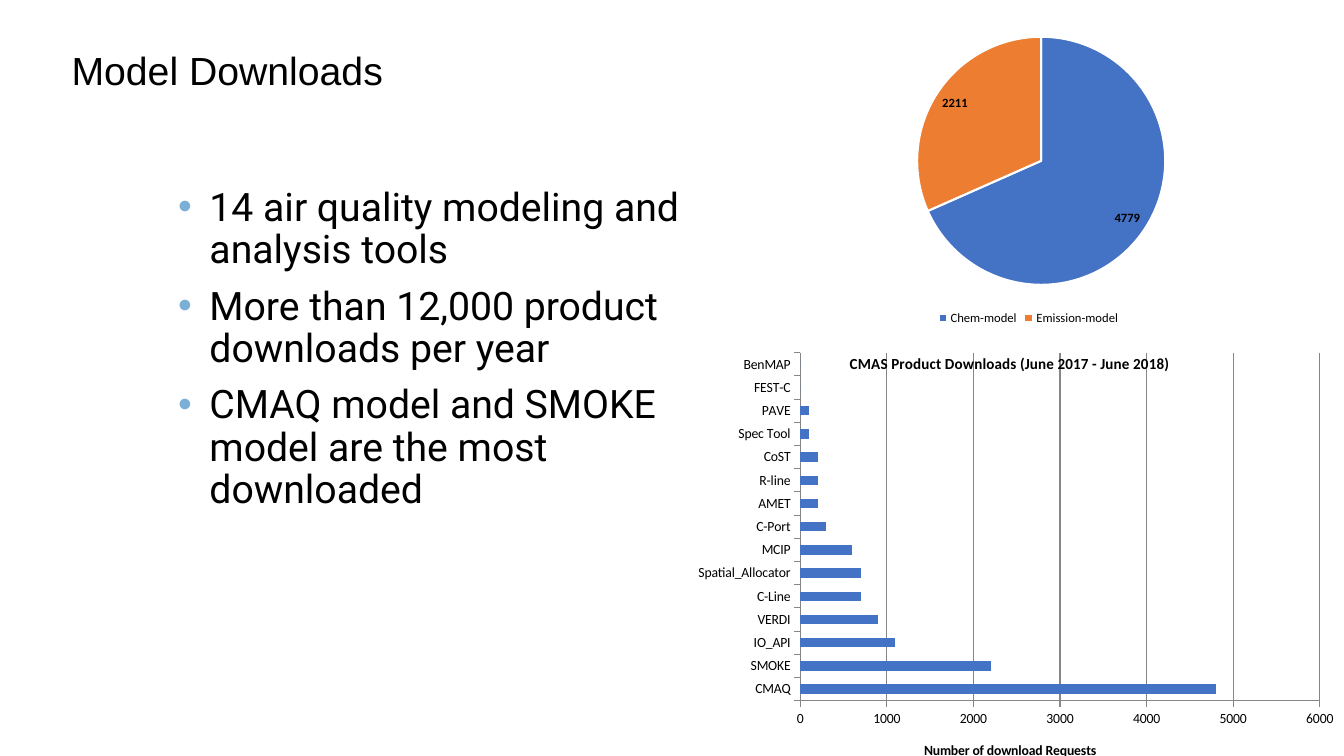
"""Build the Model Downloads slide with its bullets, pie chart and bar chart."""
from dataclasses import dataclass

from lxml.etree import SubElement
from pptx import Presentation
from pptx.chart.data import CategoryChartData
from pptx.dml.color import RGBColor
from pptx.enum.chart import XL_CHART_TYPE, XL_LABEL_POSITION, XL_LEGEND_POSITION, XL_TICK_MARK
from pptx.enum.text import MSO_ANCHOR, MSO_AUTO_SIZE, PP_ALIGN
from pptx.oxml import parse_xml
from pptx.oxml.ns import nsdecls, qn
from pptx.util import Cm, Pt


@dataclass(frozen=True)
class Theme:
    text: RGBColor = RGBColor(0, 0, 0)
    bullet: str = "7AB0D5"
    blue: RGBColor = RGBColor(0x44, 0x72, 0xC4)
    orange: RGBColor = RGBColor(0xED, 0x7D, 0x31)
    white: RGBColor = RGBColor(255, 255, 255)
    grid: RGBColor = RGBColor(0x86, 0x86, 0x86)
    title_font: str = "Arial"
    body_font: str = "Roboto"
    chart_font: str = "Calibri"
    body_size: Pt = Pt(28)
    chart_title_size: Pt = Pt(11)
    chart_size: Pt = Pt(10)
    small_size: Pt = Pt(9)


THEME = Theme()


def style(font, name, size, bold=False):
    font.name, font.size, font.bold = name, size, bold
    font.color.rgb = THEME.text


def place(element, index, **fractions):
    for old in element.findall(qn("c:layout")):
        element.remove(old)
    target = '<c:layoutTarget val="inner"/>' if "w" in fractions else ""
    modes = '<c:xMode val="edge"/><c:yMode val="edge"/>'
    sizes = "".join(f'<c:{key} val="{value}"/>' for key, value in fractions.items())
    element.insert(index, parse_xml(
        f'<c:layout {nsdecls("c")}><c:manualLayout>{target}{modes}{sizes}'
        "</c:manualLayout></c:layout>"))


prs = Presentation()
prs.slide_width, prs.slide_height = Cm(33.87), Cm(19.05)
slide = prs.slides.add_slide(prs.slide_layouts[5])

heading = slide.shapes.title
heading.left, heading.top, heading.width, heading.height = Cm(1.55), Cm(1.17), Cm(13.03), Cm(1.45)
heading.text_frame.text = "Model Downloads"
heading.text_frame.vertical_anchor = MSO_ANCHOR.TOP
heading.text_frame.auto_size = MSO_AUTO_SIZE.NONE
heading_line = heading.text_frame.paragraphs[0]
heading_line.alignment = PP_ALIGN.LEFT
heading_line.line_spacing = 0.9
style(heading_line.runs[0].font, THEME.title_font, THEME.body_size)

points = slide.shapes.add_textbox(Cm(4.24), Cm(4.6), Cm(13.46), Cm(12.47)).text_frame
points.word_wrap = True
points.text = "\n".join([
    "14 air quality modeling and analysis tools",
    "More than 12,000 product downloads per year",
    "CMAQ model and SMOKE model are the most downloaded",
])
for number, point in enumerate(points.paragraphs):
    properties = point._p.get_or_add_pPr()
    properties.set("marL", str(Cm(0.79)))
    properties.set("indent", str(Cm(-0.79)))
    SubElement(SubElement(properties, qn("a:buClr")), qn("a:srgbClr")).set("val", THEME.bullet)
    SubElement(properties, qn("a:buFont")).set("typeface", THEME.title_font)
    SubElement(properties, qn("a:buChar")).set("char", "•")
    point.line_spacing = 0.9
    point.space_before = Pt(10 if number else 0)
    style(point.runs[0].font, THEME.body_font, THEME.body_size)

downloads = {
    "CMAQ": 4800, "SMOKE": 2200, "IO_API": 1100, "VERDI": 900, "C-Line": 700,
    "Spatial_Allocator": 700, "MCIP": 600, "C-Port": 300, "AMET": 200, "R-line": 200,
    "CoST": 200, "Spec Tool": 100, "PAVE": 100, "FEST-C": 0, "BenMAP": 0,
}
product_data = CategoryChartData()
product_data.categories = downloads.keys()
product_data.add_series("Downloads", downloads.values())
products = slide.shapes.add_chart(
    XL_CHART_TYPE.BAR_CLUSTERED, Cm(17.58), Cm(8.36), Cm(16.03), Cm(11.51), product_data).chart
style(products.font, THEME.chart_font, THEME.chart_size)
products.has_legend = False
place(products._chartSpace.chart.plotArea, 0, x=0.176, y=0.046, w=0.835, h=0.762)

bars = products.plots[0]
bars.gap_width = 150
bars.vary_by_categories = False
bars.series[0].format.fill.solid()
bars.series[0].format.fill.fore_color.rgb = THEME.blue

requests = products.value_axis
requests.minimum_scale, requests.maximum_scale, requests.major_unit = 0, 6000, 1000
requests.major_gridlines.format.line.color.rgb = THEME.grid
for axis in (products.category_axis, requests):
    axis.major_tick_mark = XL_TICK_MARK.OUTSIDE
    axis.format.line.color.rgb = THEME.grid

products.has_title = True
for title, wording, size, left, top in (
    (products.chart_title, "CMAS Product Downloads (June 2017 - June 2018)",
     THEME.chart_title_size, 0.24, 0.04),
    (requests.axis_title, "Number of download Requests", THEME.chart_size, 0.36, 0.89),
):
    title.text_frame.text = wording
    style(title.text_frame.paragraphs[0].runs[0].font, THEME.chart_font, size, bold=True)
    place(title._element, 1, x=left, y=top)
products.chart_title._element.find(qn("c:overlay")).set("val", "1")

model_data = CategoryChartData()
model_data.categories = ["Chem-model", "Emission-model"]
model_data.add_series("Downloads", [4779, 2211])
models = slide.shapes.add_chart(
    XL_CHART_TYPE.PIE, Cm(19.53), Cm(0.58), Cm(12.78), Cm(7.72), model_data).chart
style(models.font, THEME.chart_font, THEME.chart_size)
models.has_title = False
models.has_legend = True
models.legend.position = XL_LEGEND_POSITION.BOTTOM
models.legend.include_in_layout = False
style(models.legend.font, THEME.chart_font, THEME.small_size)
place(models._chartSpace.chart.plotArea, 0, x=0.28, y=0.045, w=0.49, h=0.81)

pie = models.plots[0]
pie.vary_by_categories = True
for index, color in enumerate((THEME.blue, THEME.orange)):
    wedge = pie.series[0].points[index].format
    wedge.fill.solid()
    wedge.fill.fore_color.rgb = color
    wedge.line.color.rgb = THEME.white
    wedge.line.width = Pt(1.5)
pie.has_data_labels = True
pie.data_labels.show_value = True
pie.data_labels.position = XL_LABEL_POSITION.INSIDE_END
style(pie.data_labels.font, THEME.chart_font, THEME.small_size, bold=True)

prs.save("out.pptx")
